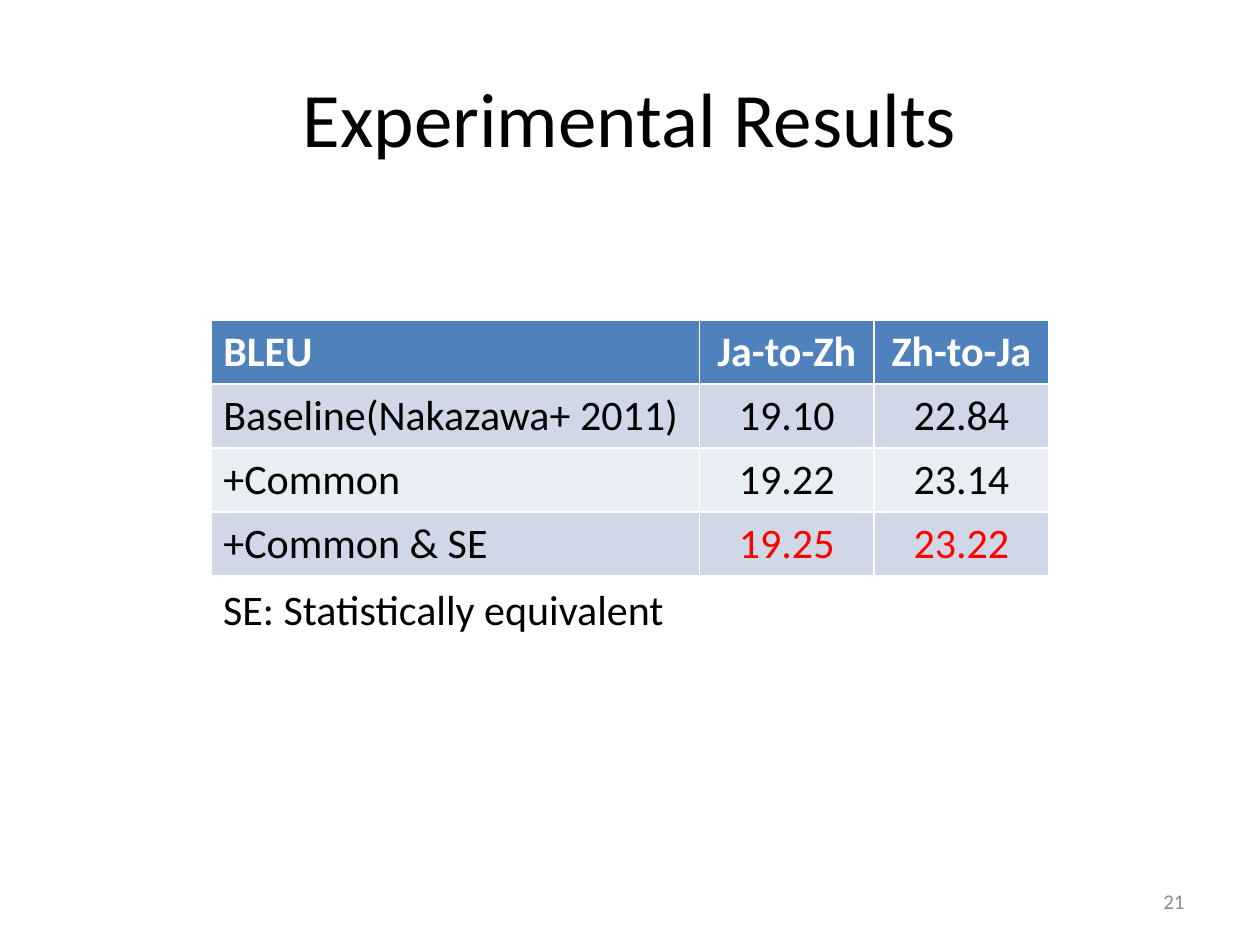
from pptx import Presentation
from pptx.dml.color import RGBColor
from pptx.enum import text
from pptx.util import Cm, Pt

BLACK = RGBColor(0x00, 0x00, 0x00)
WHITE = RGBColor(0xFF, 0xFF, 0xFF)
RED = RGBColor(0xFF, 0x00, 0x00)
GRAY = RGBColor(0x8C, 0x8C, 0x8C)
HEADER_BLUE = RGBColor(0x4F, 0x81, 0xBD)
BAND_DARK = RGBColor(0xD0, 0xD8, 0xE8)
BAND_LIGHT = RGBColor(0xE9, 0xED, 0xF4)

LEFT, CENTER, RIGHT = text.PP_ALIGN.LEFT, text.PP_ALIGN.CENTER, text.PP_ALIGN.RIGHT


def write(frame, content, size, color, alignment=LEFT, bold=False):
    frame.text = content
    paragraph = frame.paragraphs[0]
    paragraph.alignment = alignment
    paragraph.font.name = "Calibri"
    paragraph.font.size = Pt(size)
    paragraph.font.bold = bold
    paragraph.font.color.rgb = color


presentation = Presentation()
presentation.slide_width = Cm(25.4)
presentation.slide_height = Cm(19.05)
slide = presentation.slides.add_slide(presentation.slide_layouts[5])

# Title
title = slide.shapes.title
title.left, title.top, title.width, title.height = Cm(1.27), Cm(0.76), Cm(22.86), Cm(3.18)
title.text_frame.vertical_anchor = text.MSO_ANCHOR.MIDDLE
write(title.text_frame, "Experimental Results", 44, BLACK, CENTER)

# BLEU scores; the built-in table style supplies the white cell borders
scores = [
    ("BLEU", "Ja-to-Zh", "Zh-to-Ja"),
    ("Baseline(Nakazawa+ 2011)", "19.10", "22.84"),
    ("+Common", "19.22", "23.14"),
    ("+Common & SE", "19.25", "23.22"),
]
column_widths = [Cm(9.85), Cm(3.52), Cm(3.52)]
row_height = Cm(1.29)
table = slide.shapes.add_table(
    len(scores), len(column_widths), Cm(4.25), Cm(6.45),
    sum(column_widths), row_height * len(scores),
).table
for column, width in zip(table.columns, column_widths):
    column.width = width

best_row = len(scores) - 1
for row_index, row in enumerate(scores):
    is_header = row_index == 0
    if is_header:
        fill_color = HEADER_BLUE
    else:
        fill_color = BAND_DARK if row_index % 2 else BAND_LIGHT
    for column_index, content in enumerate(row):
        is_label = column_index == 0
        if is_header:
            color = WHITE
        else:
            color = RED if row_index == best_row and not is_label else BLACK
        cell = table.cell(row_index, column_index)
        cell.fill.solid()
        cell.fill.fore_color.rgb = fill_color
        write(cell.text_frame, content, 24, color, LEFT if is_label else CENTER, is_header)

# Slide number
number = slide.shapes.add_textbox(Cm(18.2), Cm(17.66), Cm(5.93), Cm(1.01))
number.text_frame.vertical_anchor = text.MSO_ANCHOR.MIDDLE
number.text_frame.word_wrap = True
write(number.text_frame, "21", 12, GRAY, RIGHT)

# Explanation of the abbreviation
note = slide.shapes.add_textbox(Cm(4.25), Cm(11.63), Cm(9.5), Cm(1.28))
note.text_frame.word_wrap = False
note.text_frame.auto_size = text.MSO_AUTO_SIZE.SHAPE_TO_FIT_TEXT
write(note.text_frame, "SE: Statistically equivalent", 24, BLACK)

presentation.save("out.pptx")
